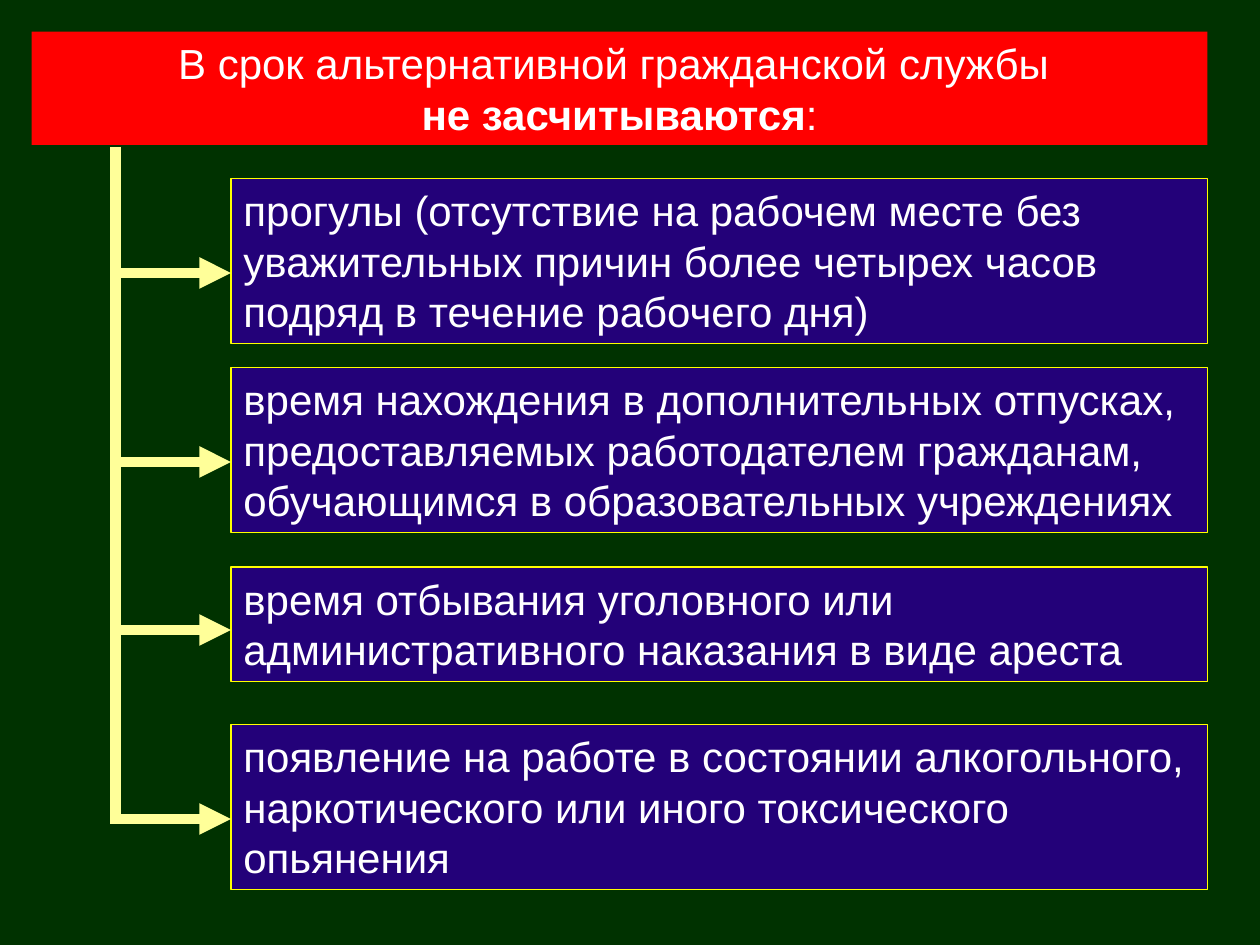
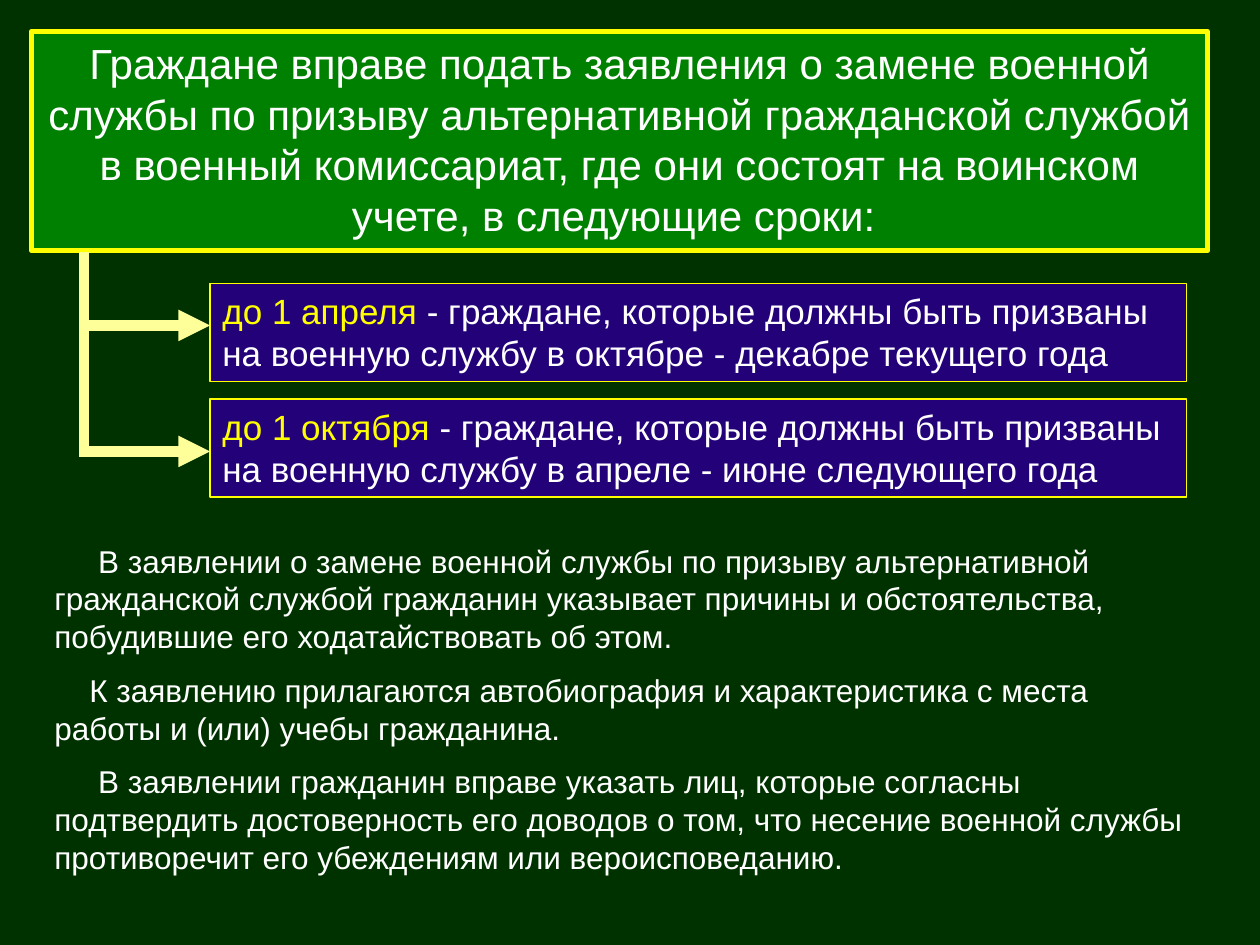
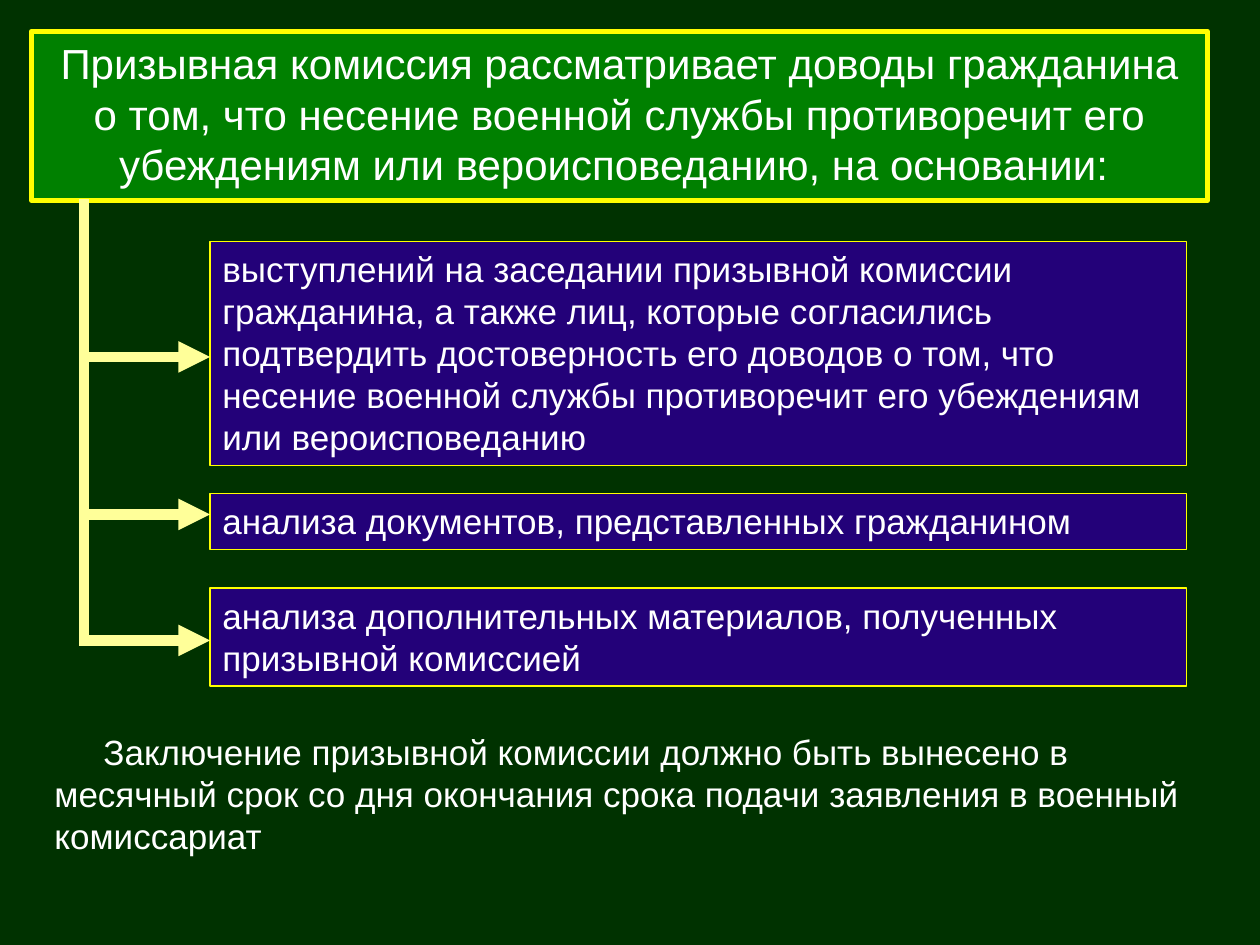
from dataclasses import dataclass

from lxml.etree import SubElement
from pptx import Presentation
from pptx.dml.color import RGBColor
from pptx.enum.shapes import MSO_CONNECTOR, MSO_SHAPE
from pptx.enum.text import MSO_ANCHOR, MSO_AUTO_SIZE, PP_ALIGN
from pptx.oxml.ns import qn
from pptx.util import Pt

# Shared style
COLORS = {
    "background": "003200",
    "red": "FF0000",
    "green": "008000",
    "indigo": "230179",
    "yellow": "FFFF00",
    "arrow": "FFFF99",
    "white": "FFFFFF",
}
FONT = "Arial"
TITLE_SIZE = 24
TITLE_LEFT, TITLE_TOP, TITLE_WIDTH = 18, 18, 672
ITEM_WIDTH = 558
REMARK_LEFT, REMARK_WIDTH = 24, 666
ARROW_WIDTH = 6
LINE_SPACING = 1.2
BOX_PADDING = 8


@dataclass
class Span:
    text: str
    color: str = "white"
    bold: bool = False


@dataclass
class Title:
    paragraphs: list[list[Span]]
    height: float
    fill: str = "green"
    border: str | None = "yellow"


@dataclass
class Item:
    """A boxed statement with the height of the arrow that points to it."""
    top: float
    lines: int
    arrow_y: float
    spans: list[Span]


@dataclass
class Remark:
    text: str
    indent: float


@dataclass
class Page:
    title: Title
    items: list[Item]
    item_left: float
    item_size: float
    spine_x: float
    spine_top: float
    remarks: list[Remark]
    remark_top: float = 0
    remark_height: float = 0
    remark_size: float = 18


# Content
PAGES = [
    Page(
        title=Title(
            [[Span("В срок альтернативной гражданской службы ")],
             [Span("не засчитываются", bold=True), Span(":")]],
            height=64.8, fill="red", border=None),
        items=[
            Item(102, 3, 156, [Span(
                "прогулы (отсутствие на рабочем месте без уважительных причин "
                "более четырех часов подряд в течение рабочего дня)")]),
            Item(210, 3, 264, [Span(
                "время нахождения в дополнительных отпусках, предоставляемых "
                "работодателем гражданам, обучающимся в образовательных учреждениях")]),
            Item(324, 2, 360, [Span(
                "время отбывания уголовного или административного наказания "
                "в виде ареста")]),
            Item(414, 3, 468, [Span(
                "появление на работе в состоянии алкогольного, наркотического "
                "или иного токсического опьянения")]),
        ],
        item_left=132, item_size=24, spine_x=66, spine_top=84, remarks=[]),
    Page(
        title=Title(
            [[Span("Граждане вправе подать заявления о замене военной службы по призыву "
                   "альтернативной гражданской службой в военный комиссариат, где они "
                   "состоят на воинском учете, в следующие сроки: ")]],
            height=125.3),
        items=[
            Item(162, 2, 186, [Span("до 1 апреля", "yellow"), Span(
                " - граждане, которые должны быть призваны на военную службу "
                "в октябре - декабре текущего года")]),
            Item(228, 2, 258, [Span("до 1 октября", "yellow"), Span(
                " - граждане, которые должны быть призваны на военную службу "
                "в апреле - июне следующего года")]),
        ],
        item_left=120, item_size=20, spine_x=48, spine_top=144,
        remarks=[
            Remark("В заявлении о замене военной службы по призыву альтернативной "
                   "гражданской службой гражданин указывает причины и обстоятельства, "
                   "побудившие его ходатайствовать об этом.", 25),
            Remark("К заявлению прилагаются автобиография и характеристика с места "
                   "работы и (или) учебы гражданина.", 20),
            Remark("В заявлении гражданин вправе указать лиц, которые согласны "
                   "подтвердить достоверность его доводов о том, что несение военной "
                   "службы противоречит его убеждениям или вероисповеданию.", 25),
        ],
        remark_top=306, remark_height=202),
    Page(
        title=Title(
            [[Span("Призывная комиссия рассматривает доводы гражданина о том, что "
                   "несение военной службы противоречит его убеждениям или "
                   "вероисповеданию, на основании: ")]],
            height=96.5),
        items=[
            Item(138, 5, 204, [Span(
                "выступлений на заседании призывной комиссии гражданина, а также лиц, "
                "которые согласились подтвердить достоверность его доводов о том, что "
                "несение военной службы противоречит его убеждениям или "
                "вероисповеданию")]),
            Item(282, 1, 294, [Span("анализа документов, представленных гражданином")]),
            Item(336, 2, 366, [Span(
                "анализа дополнительных материалов, полученных призывной комиссией")]),
        ],
        item_left=120, item_size=20, spine_x=48, spine_top=114,
        remarks=[
            Remark("Заключение призывной комиссии должно быть вынесено в месячный срок "
                   "со дня окончания срока подачи заявления в военный комиссариат", 28),
        ],
        remark_top=414, remark_height=79, remark_size=20),
]


# Drawing
def color(name: str) -> RGBColor:
    return RGBColor.from_string(COLORS[name])


def paint(shape, fill: str, border: str | None, width: float) -> None:
    shape.fill.solid()
    shape.fill.fore_color.rgb = color(fill)
    if border is None:
        shape.line.fill.background()
    else:
        shape.line.color.rgb = color(border)
        shape.line.width = Pt(width)


def write(frame, paragraphs: list[list[Span]], size: float, align=PP_ALIGN.LEFT) -> None:
    frame.word_wrap = True
    frame.auto_size = MSO_AUTO_SIZE.NONE
    frame.vertical_anchor = MSO_ANCHOR.TOP
    for number, spans in enumerate(paragraphs):
        para = frame.add_paragraph() if number else frame.paragraphs[0]
        para.alignment = align
        for span in spans:
            run = para.add_run()
            run.text = span.text
            run.font.name = FONT
            run.font.size = Pt(size)
            run.font.bold = span.bold
            run.font.color.rgb = color(span.color)


def draw_title(slide, title: Title) -> None:
    box = slide.shapes.title
    box.left, box.top = Pt(TITLE_LEFT), Pt(TITLE_TOP)
    box.width, box.height = Pt(TITLE_WIDTH), Pt(title.height)
    paint(box, title.fill, title.border, 3)
    write(box.text_frame, title.paragraphs, TITLE_SIZE, PP_ALIGN.CENTER)


def draw_item(slide, item: Item, left: float, size: float) -> None:
    height = item.lines * size * LINE_SPACING + BOX_PADDING
    box = slide.shapes.add_shape(
        MSO_SHAPE.RECTANGLE, Pt(left), Pt(item.top), Pt(ITEM_WIDTH), Pt(height))
    box.shadow.inherit = False
    paint(box, "indigo", "yellow", 0.75)
    write(box.text_frame, [item.spans], size)


def draw_line(slide, start: tuple[float, float], end: tuple[float, float],
              arrow: bool = False) -> None:
    line = slide.shapes.add_connector(
        MSO_CONNECTOR.STRAIGHT, Pt(start[0]), Pt(start[1]), Pt(end[0]), Pt(end[1]))
    line.line.color.rgb = color("arrow")
    line.line.width = Pt(ARROW_WIDTH)
    if arrow:
        SubElement(line.line._get_or_add_ln(), qn("a:tailEnd"), type="triangle")
    SubElement(line._element.spPr, qn("a:effectLst"))


def draw_tree(slide, page: Page) -> None:
    for item in page.items:
        draw_item(slide, item, page.item_left, page.item_size)
        draw_line(slide, (page.spine_x, item.arrow_y),
                  (page.item_left, item.arrow_y), arrow=True)
    spine_bottom = page.items[-1].arrow_y + ARROW_WIDTH / 2
    draw_line(slide, (page.spine_x, page.spine_top), (page.spine_x, spine_bottom))


def draw_remarks(slide, page: Page) -> None:
    box = slide.shapes.add_textbox(
        Pt(REMARK_LEFT), Pt(page.remark_top), Pt(REMARK_WIDTH), Pt(page.remark_height))
    frame = box.text_frame
    write(frame, [[Span(remark.text)] for remark in page.remarks], page.remark_size)
    for number, (para, remark) in enumerate(zip(frame.paragraphs, page.remarks)):
        para._p.get_or_add_pPr().set("indent", str(Pt(remark.indent)))
        if number:
            para.space_before = Pt(page.remark_size / 2)


def main() -> None:
    deck = Presentation()
    deck.slide_width, deck.slide_height = Pt(720), Pt(540)
    background = deck.slide_master.background.fill
    background.solid()
    background.fore_color.rgb = color("background")
    title_only = deck.slide_layouts.get_by_name("Title Only")
    for page in PAGES:
        slide = deck.slides.add_slide(title_only)
        draw_title(slide, page.title)
        draw_tree(slide, page)
        if page.remarks:
            draw_remarks(slide, page)
    deck.save("out.pptx")


if __name__ == "__main__":
    main()
